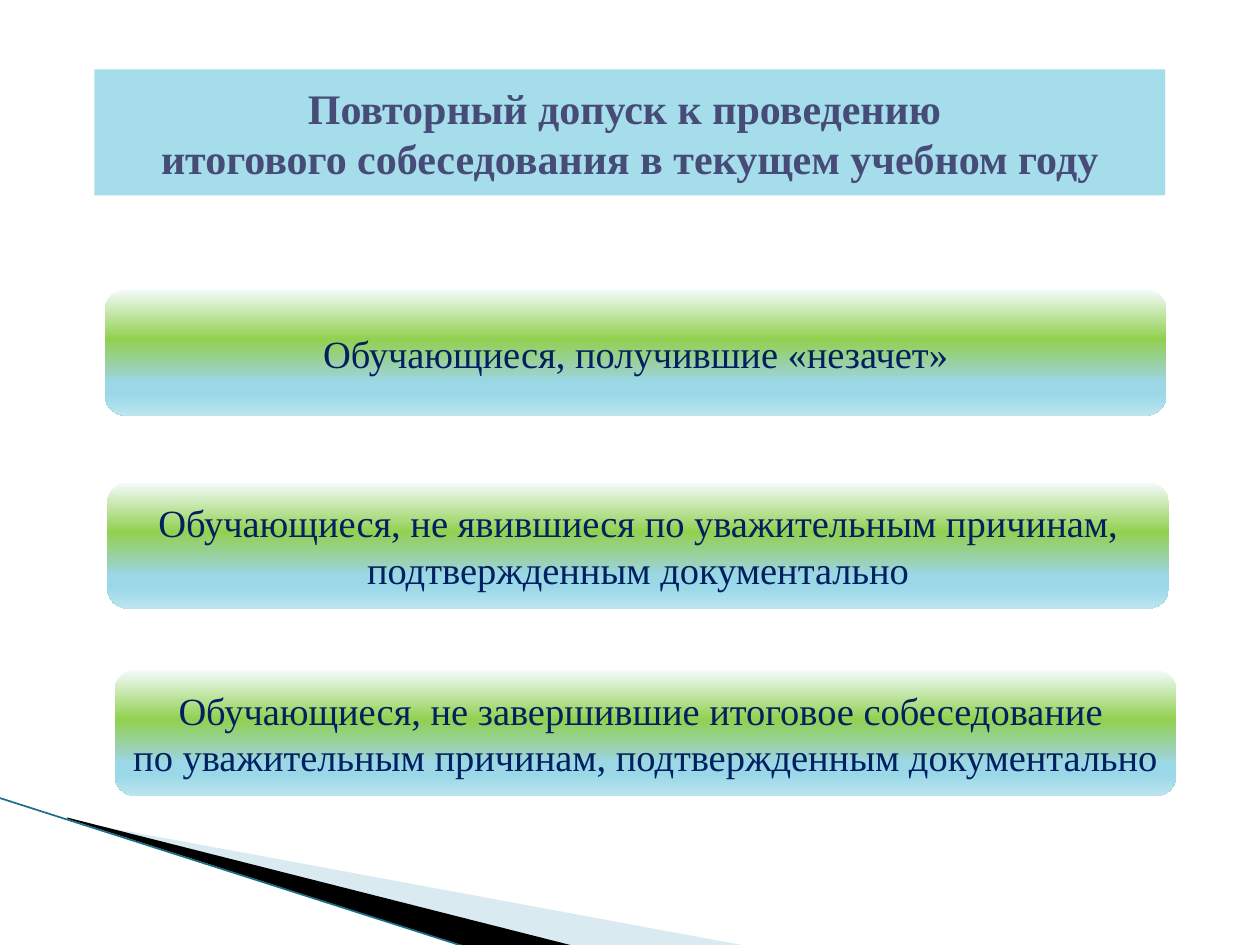
from dataclasses import dataclass

from lxml import etree
from pptx import Presentation
from pptx import util as u
from pptx.dml.color import RGBColor
from pptx.enum import shapes, text
from pptx.oxml import ns

HUES = {
    "pale": "A0CBDC", "black": "000000", "edge": "1A6F85",
    "band": "A6DDEA", "head": "474B78", "body": "002060",
}
STOPS = [(0, "F4FBFC"), (39, "92D050"), (67, "9CD2C7"),
         (73, "9BD8E7"), (83, "9BD8E7"), (100, "BCE5EF")]
FACE = "Times New Roman"
HIGH = 2.54


@dataclass
class Wedge:
    hue: str
    pts: list
    alpha: int = 100


@dataclass
class Card:
    left: float
    top: float
    words: str


WEDGES = [
    Wedge("pale", [(1.4, 16.54), (15.11, 19.08), (11.58, 19.08), (1.4, 16.51)], 40),
    Wedge("black", [(1.35, 16.48), (11.61, 19.08), (9.45, 19.1), (1.37, 16.51)]),
]
CARDS = [
    Card(2.11, 5.84, "Обучающиеся, получившие «незачет»"),
    Card(2.16, 9.73, "Обучающиеся, не явившиеся по уважительным причинам, "
                     "подтвержденным документально"),
    Card(2.31, 13.51, "Обучающиеся, не завершившие итоговое собеседование \n"
                      "по уважительным причинам, подтвержденным документально "),
]
TITLE = ["Повторный допуск к проведению ",
         "итогового собеседования в текущем учебном году"]


def tint(hue: str) -> RGBColor:
    return RGBColor.from_string(HUES[hue])


def sub(node, tag: str, **attrs):
    return etree.SubElement(node, ns.qn(tag), **attrs)


def write(shape, lines: list, size: int, hue: str, bold: bool) -> None:
    frame = shape.text_frame
    form = {"word_wrap": True, "auto_size": text.MSO_AUTO_SIZE.NONE,
            "vertical_anchor": text.MSO_ANCHOR.MIDDLE}
    for key, val in form.items():
        setattr(frame, key, val)
    for i, line in enumerate(lines):
        para = frame.add_paragraph() if i else frame.paragraphs[0]
        para.text = line
        para.alignment = text.PP_ALIGN.CENTER
        for run in para.runs:
            for key, val in {"name": FACE, "size": u.Pt(size), "bold": bold}.items():
                setattr(run.font, key, val)
            run.font.color.rgb = tint(hue)


def draw_wedge(slide, wedge: Wedge) -> None:
    pts = [(u.Cm(x), u.Cm(y)) for x, y in wedge.pts]
    pen = slide.shapes.build_freeform(*pts[0])
    pen.add_line_segments(pts[1:], close=True)
    shape = pen.convert_to_shape()
    shape.shadow.inherit = False
    shape.line.fill.background()
    shape.fill.solid()
    shape.fill.fore_color.rgb = tint(wedge.hue)
    if wedge.alpha < 100:
        color = shape.fill._xPr.find(".//" + ns.qn("a:srgbClr"))
        sub(color, "a:alpha", val=str(wedge.alpha * 1000))


def draw_edge(slide) -> None:
    line = slide.shapes.add_connector(
        shapes.MSO_CONNECTOR.STRAIGHT,
        u.Cm(-0.03), u.Cm(16.08), u.Cm(9.42), u.Cm(19.1))
    line.line.color.rgb = tint("edge")
    line.line.width = u.Pt(0.95)
    sub(line._element.spPr, "a:effectLst")


def draw_card(slide, card: Card) -> None:
    shape = slide.shapes.add_shape(
        shapes.MSO_SHAPE.ROUNDED_RECTANGLE,
        u.Cm(card.left), u.Cm(card.top), u.Cm(21.41), u.Cm(HIGH))
    shape.shadow.inherit = False
    shape.line.fill.background()
    # Vertical gradient with six stops
    shape.fill.gradient()
    grad = shape._element.spPr.find(ns.qn("a:gradFill"))
    for node in list(grad):
        grad.remove(node)
    stops = sub(grad, "a:gsLst")
    for pos, hue in STOPS:
        sub(sub(stops, "a:gs", pos=str(pos * 1000)), "a:srgbClr", val=hue)
    sub(grad, "a:lin", ang="5400000", scaled="0")
    write(shape, [card.words], 22, "body", False)


def draw_title(slide) -> None:
    title = slide.shapes.title
    place = {"left": 1.9, "top": 1.4, "width": 21.59, "height": HIGH}
    for key, val in place.items():
        setattr(title, key, u.Cm(val))
    title.fill.solid()
    title.fill.fore_color.rgb = tint("band")
    write(title, TITLE, 24, "head", True)


def main() -> None:
    deck = Presentation()
    deck.slide_width, deck.slide_height = u.Cm(25.4), u.Cm(19.05)
    slide = deck.slides.add_slide(deck.slide_layouts[5])
    # Corner decoration
    for wedge in WEDGES:
        draw_wedge(slide, wedge)
    draw_edge(slide)
    # Heading and cards
    draw_title(slide)
    for card in CARDS:
        draw_card(slide, card)
    deck.save("out.pptx")


if __name__ == "__main__":
    main()
